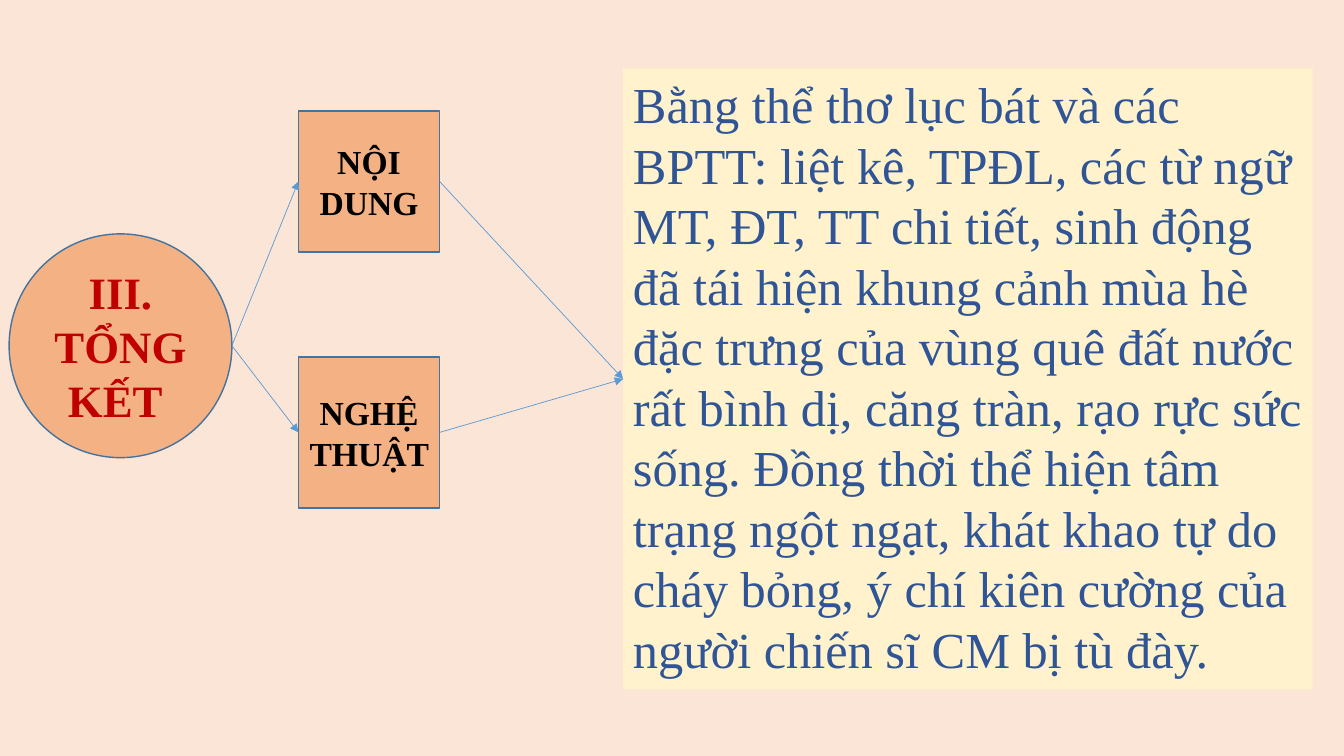
from lxml import etree
from pptx import Presentation
from pptx.dml.color import RGBColor
from pptx.enum.shapes import MSO_CONNECTOR, MSO_SHAPE
from pptx.enum.text import MSO_ANCHOR, MSO_AUTO_SIZE, PP_ALIGN
from pptx.oxml.ns import qn
from pptx.util import Inches, Pt

COLORS = {
    "background": "FBE5D6",
    "node": "F4B183",
    "outline": "43739E",
    "arrow": "5B9BD5",
    "panel": "FFF2CC",
    "title": "C00000",
    "label": "000000",
    "summary": "2F5597",
}

SUMMARY = (
    "Bằng thể thơ lục bát và các BPTT: liệt kê, TPĐL, các từ ngữ MT, ĐT, TT "
    "chi tiết, sinh động đã tái hiện khung cảnh mùa hè đặc trưng của vùng quê "
    "đất nước rất bình dị, căng tràn, rạo rực sức sống. Đồng thời thể hiện tâm "
    "trạng ngột ngạt, khát khao tự do cháy bỏng, ý chí kiên cường của người "
    "chiến sĩ CM bị tù đày."
)


class DiagramSlide:
    font = "Times New Roman"

    def __init__(self, presentation):
        self.slide = presentation.slides.add_slide(presentation.slide_layouts[6])
        fill = self.slide.background.fill
        fill.solid()
        fill.fore_color.rgb = self.color("background")

    def color(self, name):
        return RGBColor.from_string(COLORS[name])

    def box(self, kind, left, top, width, height, fill):
        shape = self.slide.shapes.add_shape(
            kind, Inches(left), Inches(top), Inches(width), Inches(height))
        shape.shadow.inherit = False
        shape.fill.solid()
        shape.fill.fore_color.rgb = self.color(fill)
        shape.line.fill.background()
        shape.text_frame.word_wrap = True
        return shape

    def add_text(self, shape, text, size, color, alignment, bold=False):
        paragraph = shape.text_frame.paragraphs[0]
        paragraph.alignment = alignment
        run = paragraph.add_run()
        run.text = text
        run.font.name = self.font
        run.font.size = Pt(size)
        run.font.bold = bold
        run.font.color.rgb = self.color(color)

    def node(self, kind, left, top, width, height, text, size, color):
        """Add an outlined shape with a bold centred label."""
        shape = self.box(kind, left, top, width, height, "node")
        shape.line.color.rgb = self.color("outline")
        shape.line.width = Pt(1)
        shape.text_frame.vertical_anchor = MSO_ANCHOR.MIDDLE
        self.add_text(shape, text, size, color, PP_ALIGN.CENTER, bold=True)
        return shape

    def panel(self, left, top, width, height, text):
        shape = self.box(MSO_SHAPE.RECTANGLE, left, top, width, height, "panel")
        shape.text_frame.vertical_anchor = MSO_ANCHOR.TOP
        shape.text_frame.auto_size = MSO_AUTO_SIZE.SHAPE_TO_FIT_TEXT
        self.add_text(shape, text, 36, "summary", PP_ALIGN.LEFT)
        return shape

    def arrow(self, source, target):
        """Point from the right middle of source to the left middle of target."""
        connector = self.slide.shapes.add_connector(
            MSO_CONNECTOR.STRAIGHT,
            source.left + source.width, source.top + source.height // 2,
            target.left, target.top + target.height // 2)
        connector.line.color.rgb = self.color("arrow")
        connector.line.width = Pt(0.5)
        properties = connector._element.spPr
        line = properties.find(qn("a:ln"))
        etree.SubElement(line, qn("a:tailEnd"), type="triangle")
        etree.SubElement(properties, qn("a:effectLst"))


def main():
    presentation = Presentation()
    presentation.slide_width = Inches(13.33)
    presentation.slide_height = Inches(7.5)
    diagram = DiagramSlide(presentation)

    conclusion = diagram.node(
        MSO_SHAPE.OVAL, 0.09, 2.32, 2.21, 2.22, "III. TỔNG KẾT ", 32, "title")
    aspects = [
        diagram.node(MSO_SHAPE.RECTANGLE, 2.96, top, 1.4, height, text, 24, "label")
        for top, height, text in ((1.1, 1.4, "NỘI DUNG"), (3.54, 1.5, "NGHỆ THUẬT "))
    ]
    summary = diagram.panel(6.18, 0.68, 6.84, 6.16, SUMMARY)

    for aspect in aspects:
        diagram.arrow(conclusion, aspect)
    for aspect in aspects:
        diagram.arrow(aspect, summary)

    presentation.save("out.pptx")


if __name__ == "__main__":
    main()
